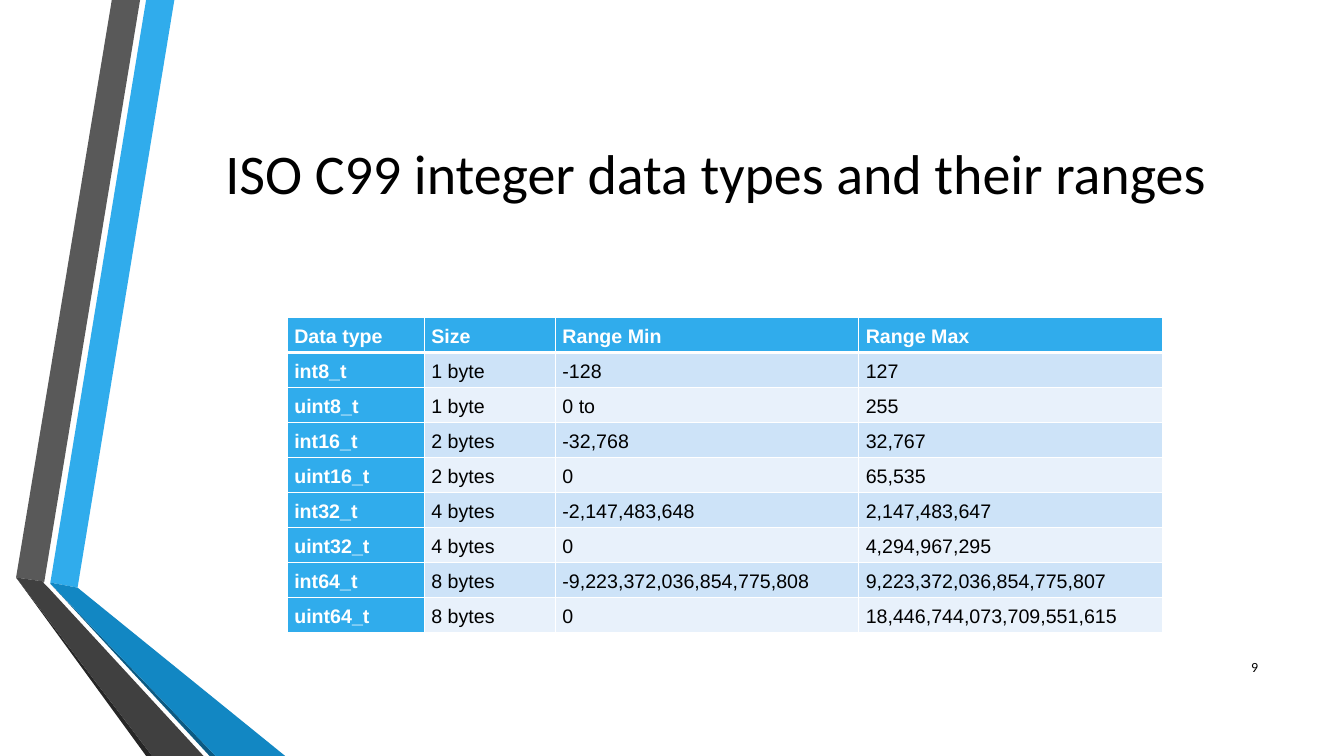
from lxml import etree
from pptx import Presentation
from pptx.dml.color import RGBColor
from pptx.enum.text import MSO_ANCHOR, PP_ALIGN
from pptx.oxml.ns import qn
from pptx.util import Inches, Pt

MIDDLE = MSO_ANCHOR.MIDDLE
LEFT, CENTER, RIGHT = PP_ALIGN.LEFT, PP_ALIGN.CENTER, PP_ALIGN.RIGHT

UNIT = Inches(0.1)
SLIDE_COLUMNS, SLIDE_ROWS = 133.33, 75

COLORS = {
    "white": "FFFFFF",
    "black": "000000",
    "blue": "30ACEC",
    "deep blue": "1287C3",
    "navy": "0C5A82",
    "gray": "595959",
    "dark gray": "404040",
    "charcoal": "262626",
    "odd row": "CDE3F8",
    "even row": "E8F1FB",
}

RIBBONS = [
    ("blue", [(5, 57.8), (7.7, 58.3), (17.3, 0), (14.5, 0)]),
    ("gray", [(13.9, 0), (11.1, 0), (1.6, 57.3), (4.4, 57.7)]),
    ("charcoal", [(1.6, 57.3), (14.5, 75), (15.1, 75)]),
    ("navy", [(5, 57.9), (20.8, 75), (21.4, 75)]),
    ("deep blue", [(5, 57.9), (21.4, 75), (28.3, 75), (7.7, 58.3), (5, 57.8)]),
    ("dark gray", [(20.2, 75), (4.8, 58.3), (4.3, 57.8), (4.4, 57.7),
                   (1.6, 57.3), (15.1, 75)]),
]

COLUMN_WIDTHS = [13.6, 13, 30.1, 30.1]
ROW_HEIGHT = 3.47
INTEGER_TYPES = [
    ("Data type", "Size", "Range Min", "Range Max"),
    ("int8_t", "1 byte", "-128", "127"),
    ("uint8_t", "1 byte", "0 to", "255"),
    ("int16_t", "2 bytes", "-32,768", "32,767"),
    ("uint16_t", "2 bytes", "0", "65,535"),
    ("int32_t", "4 bytes", "-2,147,483,648", "2,147,483,647"),
    ("uint32_t", "4 bytes", "0", "4,294,967,295"),
    ("int64_t", "8 bytes", "-9,223,372,036,854,775,808", "9,223,372,036,854,775,807"),
    ("uint64_t", "8 bytes", "0", "18,446,744,073,709,551,615"),
]


def grid(*counts):
    """Turn counts of grid columns or rows into lengths."""
    return [round(count * UNIT) for count in counts]


def color(name):
    """Look up a named colour."""
    return RGBColor.from_string(COLORS[name])


def write(frame, text, *, size, font, ink="black", bold=False, align=LEFT, spacing=None):
    """Write one formatted paragraph into a text frame."""
    para = frame.paragraphs[0]
    para.alignment = align
    if spacing:
        para.line_spacing = spacing
    span = para.add_run()
    span.text = text
    span.font.size = Pt(size)
    span.font.name = font
    span.font.bold = bold
    span.font.color.rgb = color(ink)


def add_text(page, place, text, **text_format):
    """Add a wrapping, vertically centred text box."""
    frame = page.shapes.add_textbox(*grid(*place)).text_frame
    frame.word_wrap = True
    frame.vertical_anchor = MIDDLE
    write(frame, text, **text_format)


def add_ribbon(page, fill, corners):
    """Add one filled polygon of the folded ribbons."""
    start, *others = [grid(*corner) for corner in corners]
    builder = page.shapes.build_freeform(*start)
    builder.add_line_segments(others, close=True)
    ribbon = builder.convert_to_shape()
    ribbon.shadow.inherit = False
    ribbon.fill.solid()
    ribbon.fill.fore_color.rgb = color(fill)
    ribbon.line.fill.background()


def add_borders(cell, top, bottom):
    """Draw white cell borders, with top and bottom widths in points."""
    properties = cell._tc.get_or_add_tcPr()
    for side, width in (("L", 1), ("R", 1), ("T", top), ("B", bottom)):
        line = etree.SubElement(properties, qn(f"a:ln{side}"), w=str(Pt(width)))
        paint = etree.SubElement(line, qn("a:solidFill"))
        etree.SubElement(paint, qn("a:srgbClr"), val=COLORS["white"])


def style_cell(cell, row, column):
    """Set the borders, fill and margins of a cell by its position."""
    add_borders(cell, top=3 if row == 1 else 1, bottom=3 if row == 0 else 1)
    if row == 0 or column == 0:
        fill = "blue"
    else:
        fill = "odd row" if row % 2 else "even row"
    cell.fill.solid()
    cell.fill.fore_color.rgb = color(fill)
    cell.vertical_anchor = MIDDLE
    cell.margin_left, cell.margin_right = grid(0.7, 0.7)
    cell.margin_top = cell.margin_bottom = 0


def add_type_table(page, left, top):
    """Add the table of integer types and their ranges."""
    size = grid(sum(COLUMN_WIDTHS), ROW_HEIGHT * len(INTEGER_TYPES))
    table = page.shapes.add_table(
        len(INTEGER_TYPES), len(COLUMN_WIDTHS), *grid(left, top), *size).table
    table.first_col = True
    for column, width in zip(table.columns, grid(*COLUMN_WIDTHS)):
        column.width = width
    for row, values in enumerate(INTEGER_TYPES):
        table.rows[row].height = grid(ROW_HEIGHT)[0]
        for column, value in enumerate(values):
            cell = table.cell(row, column)
            heading = row == 0 or column == 0
            style_cell(cell, row, column)
            write(cell.text_frame, value, size=14, font="Arial", bold=heading,
                  ink="white" if heading else "black", spacing=1.15)


def main():
    """Build the slide and save the deck."""
    deck = Presentation()
    deck.slide_width, deck.slide_height = grid(SLIDE_COLUMNS, SLIDE_ROWS)
    page = deck.slides.add_slide(deck.slide_layouts[6])
    for fill, corners in RIBBONS:
        add_ribbon(page, fill, corners)
    add_text(page, (16.2, 7.5, 109.6, 19.2), "ISO C99 integer data types and their ranges",
             size=40, font="Calibri", align=CENTER)
    add_type_table(page, 28.5, 31.5)
    add_text(page, (119.8, 64.2, 6, 4), "9", size=10, font="Calibri", align=RIGHT)
    deck.save("out.pptx")


if __name__ == "__main__":
    main()
